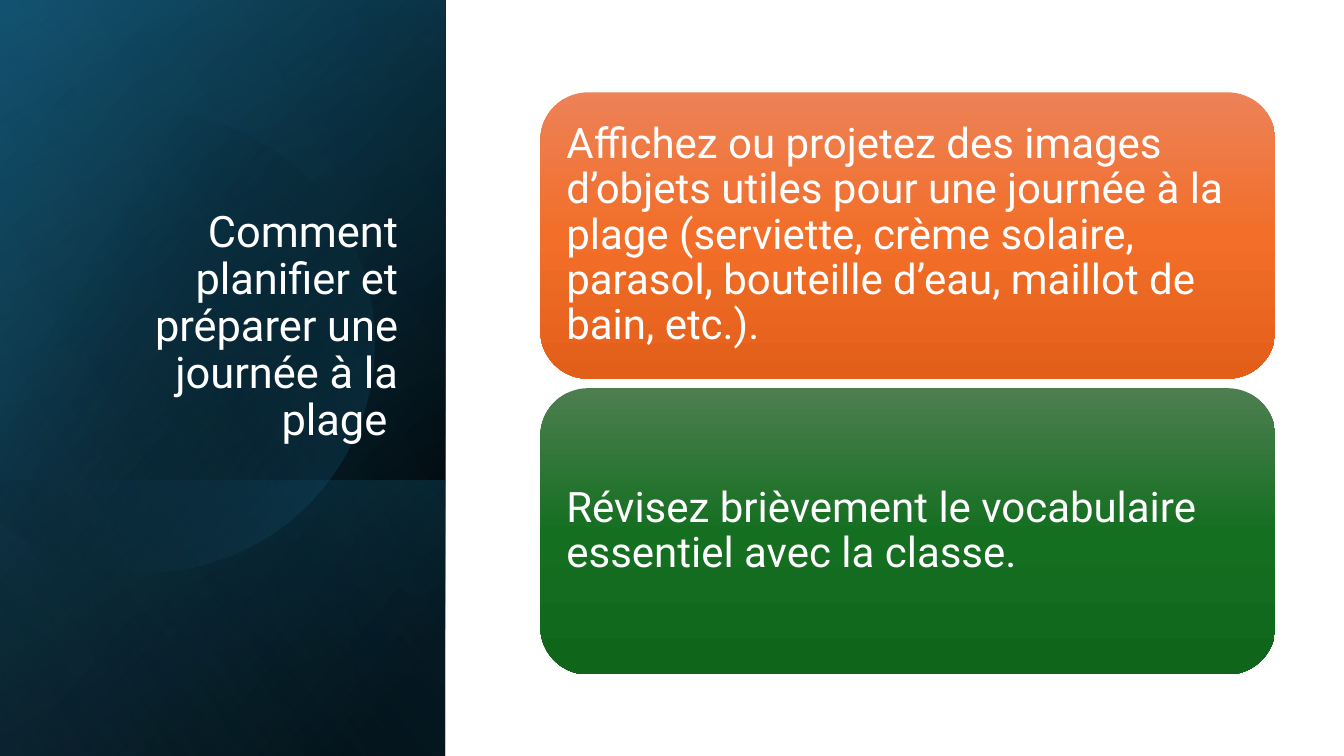
"""Builds the slide on planning and preparing a day at the beach."""
import pptx
import pptx.dml.color
import pptx.enum.shapes
import pptx.enum.text
import pptx.oxml
import pptx.oxml.ns
import pptx.util
from lxml import etree

Pt = pptx.util.Pt
RGB = pptx.dml.color.RGBColor
ANCHOR = pptx.enum.text.MSO_ANCHOR
ALIGN = pptx.enum.text.PP_ALIGN
SHAPE = pptx.enum.shapes.MSO_SHAPE

WHITE = RGB(0xFF, 0xFF, 0xFF)
BLACK = RGB(0x00, 0x00, 0x00)
DEEP_BLUE = RGB(0x10, 0x48, 0x62)
TEAL = RGB(0x15, 0x60, 0x82)
SKY = RGB(0x46, 0xB1, 0xE1)
ORANGES = RGB(0xED, 0x82, 0x57), RGB(0xF2, 0x6E, 0x29), RGB(0xE2, 0x5F, 0x1A)
GREENS = RGB(0x4D, 0x7E, 0x50), RGB(0x15, 0x6F, 0x21), RGB(0x0F, 0x66, 0x1B)
FONT = "Roboto"

TITLE = "Comment planifier et préparer une journée à la plage "
CARDS = [
    ("Affichez ou projetez des images d’objets utiles pour une journée à la plage "
     "(serviette, crème solaire, parasol, bouteille d’eau, maillot de bain, etc.).", ORANGES),
    ("Révisez brièvement le vocabulaire essentiel avec la classe.", GREENS),
]

SLIDE_W, SLIDE_H = 960, 540
PANEL_W = 318
BAND_TOP = 343
CARD_LEFT, CARD_TOP, CARD_W, CARD_H, CARD_STEP = 386, 66, 525, 204.5, 211.3
CARD_INSET = 8.6

BACK_LAYERS = [
    (0, 50, [(8, BLACK, 100), (100, DEEP_BLUE, 100)]),
    (0, 30, [(0, BLACK, 0), (99, TEAL, 46)]),
    (BAND_TOP, 130, [(2, TEAL, 29), (100, BLACK, 30)]),
]
DISC_STOPS = [(29, BLACK, 0), (100, TEAL, 43)]
SHEEN = (0, 120, [(0, BLACK, 0), (99, SKY, 11)])

DISC_START = (107, 79)
DISC_CURVES = [
    [(177, 81), (241, 127), (261, 198)],
    [(287, 286), (236, 377), (149, 402)],
    [(94, 418), (38, 404), (-2, 370)],
    [(-11, 362), (-11, 362), (-11, 362)],
    [(-11, 126), (-11, 126), (-11, 126)],
    [(0, 116), (0, 116), (0, 116)],
    [(17, 102), (36, 92), (58, 86)],
    [(74, 81), (91, 79), (107, 79)],
]
CURVE_STEPS = 16


def paint(shape, angle, stops):
    """Give a shape a linear gradient, no line and no shadow."""
    shape.shadow.inherit = False
    shape.line.fill.background()
    shape.fill.gradient()
    shape.fill.gradient_angle = (360 - angle) % 360
    stop_list = shape._element.spPr.find(".//" + pptx.oxml.ns.qn("a:gsLst"))
    for preset in list(stop_list):
        stop_list.remove(preset)
    for position, color, opacity in stops:
        stop = etree.SubElement(stop_list, pptx.oxml.ns.qn("a:gs"), pos=str(position * 1000))
        tint = etree.SubElement(stop, pptx.oxml.ns.qn("a:srgbClr"), val=str(color))
        if opacity < 100:
            etree.SubElement(tint, pptx.oxml.ns.qn("a:alpha"), val=str(opacity * 1000))


def add_layer(slide, top, angle, stops):
    """Add a quarter-turned, mirrored panel reaching from top to the slide's foot."""
    height = SLIDE_H - top
    layer = slide.shapes.add_shape(
        SHAPE.RECTANGLE, Pt((PANEL_W - height) / 2), Pt(top + (height - PANEL_W) / 2),
        Pt(height), Pt(PANEL_W))
    layer.rotation = 90
    layer._element.spPr.xfrm.set("flipH", "1")
    paint(layer, angle, stops)


def curve_points(start, curves):
    """Return points along a chain of cubic curves."""
    points = []
    for first, second, end in curves:
        for step in range(1, CURVE_STEPS + 1):
            t = step / CURVE_STEPS
            u = 1 - t
            points.append(tuple(
                Pt(u**3 * a + 3 * u * u * t * b + 3 * u * t * t * c + t**3 * d)
                for a, b, c, d in zip(start, first, second, end)))
        start = end
    return points


def add_disc(slide):
    """Add the faint disc on the panel."""
    outline = slide.shapes.build_freeform(Pt(DISC_START[0]), Pt(DISC_START[1]))
    outline.add_line_segments(curve_points(DISC_START, DISC_CURVES), close=True)
    paint(outline.convert_to_shape(), 30, DISC_STOPS)


def write(frame, text, size, align, anchor):
    """Write one white paragraph into a text frame."""
    frame.word_wrap = True
    frame.auto_size = pptx.enum.text.MSO_AUTO_SIZE.NONE
    frame.vertical_anchor = anchor
    paragraph = frame.paragraphs[0]
    paragraph.alignment = align
    paragraph.line_spacing = 0.9
    paragraph.space_before = Pt(0)
    run = paragraph.add_run()
    run.text = text
    run.font.name = FONT
    run.font.size = Pt(size)
    run.font.color.rgb = WHITE


def add_title(slide):
    """Place the title above the panel layers."""
    title = slide.shapes.title
    slide.shapes._spTree.append(title._element)
    title.left, title.top, title.width, title.height = Pt(46), Pt(132.5), Pt(245.5), Pt(188.6)
    write(title.text_frame, TITLE, 31, ALIGN.RIGHT, ANCHOR.BOTTOM)


def add_card(slide, index, text, colors):
    """Add one rounded card of the right-hand column."""
    card = slide.shapes.add_shape(
        SHAPE.ROUNDED_RECTANGLE, Pt(CARD_LEFT), Pt(CARD_TOP + index * CARD_STEP),
        Pt(CARD_W), Pt(CARD_H))
    paint(card, 90, [(place, color, 100) for place, color in zip((0, 50, 100), colors)])
    frame = card.text_frame
    frame.margin_left = frame.margin_right = Pt(CARD_INSET)
    frame.margin_top = frame.margin_bottom = Pt(CARD_INSET)
    write(frame, text, 30, ALIGN.LEFT, ANCHOR.MIDDLE)


def main():
    """Build and save the slide."""
    deck = pptx.Presentation()
    deck.slide_width, deck.slide_height = Pt(SLIDE_W), Pt(SLIDE_H)
    slide = deck.slides.add_slide(deck.slide_layouts[5])
    for layer in BACK_LAYERS:
        add_layer(slide, *layer)
    add_disc(slide)
    add_layer(slide, *SHEEN)
    add_title(slide)
    for index, (text, colors) in enumerate(CARDS):
        add_card(slide, index, text, colors)
    deck.save("out.pptx")


if __name__ == "__main__":
    main()
